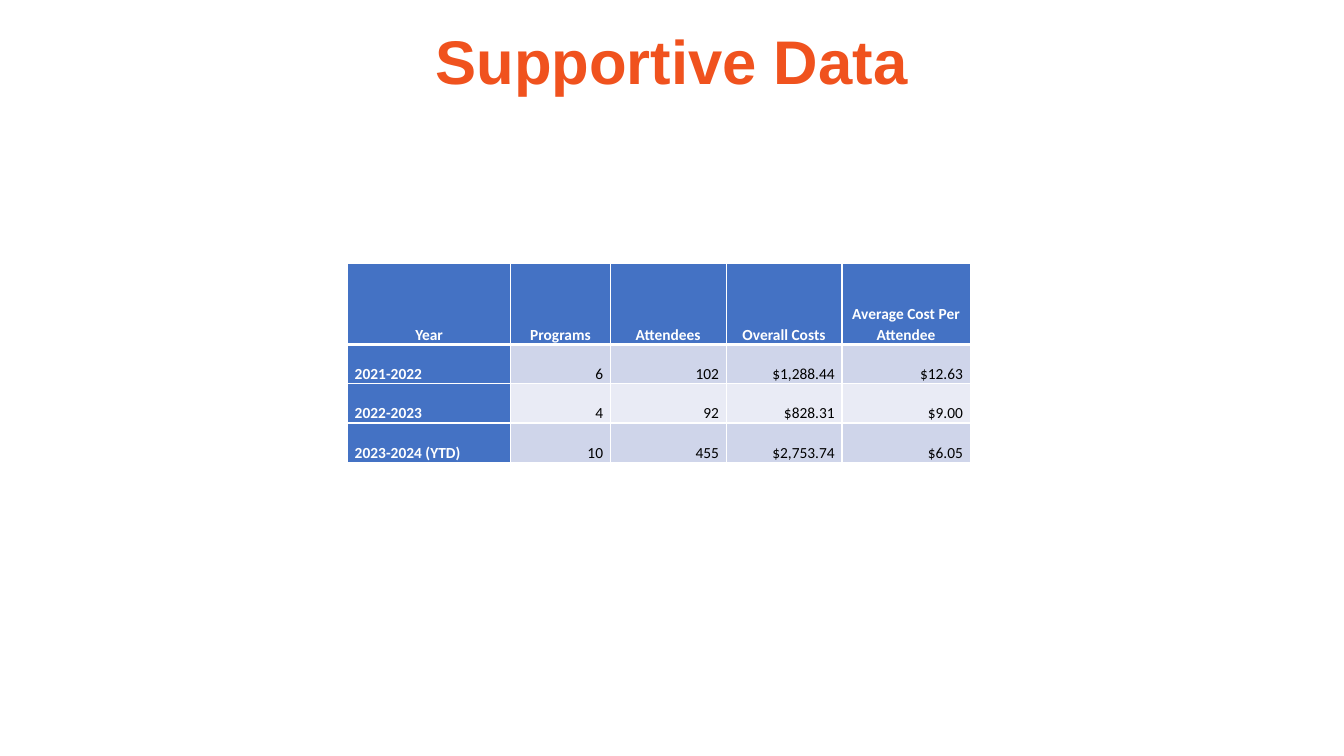
"""Build the Supportive Data slide with its program cost table."""
import lxml.etree
import pptx
import pptx.dml.color
import pptx.enum.text
import pptx.oxml.ns
import pptx.util

Cm, Pt = pptx.util.Cm, pptx.util.Pt
ALIGN, ANCHOR = pptx.enum.text.PP_ALIGN, pptx.enum.text.MSO_ANCHOR

TITLE = "Supportive Data"
ROWS = [
    ("Year", "Programs", "Attendees", "Overall Costs", "Average Cost Per Attendee"),
    ("2021-2022", "6", "102", "$1,288.44", "$12.63"),
    ("2022-2023", "4", "92", "$828.31", "$9.00"),
    ("2023-2024 (YTD)", "10", "455", "$2,753.74", "$6.05"),
]
COL_WIDTHS = [4.11, 2.51, 2.92, 2.92, 3.23]
ROW_HEIGHTS = [2.05, 0.99, 0.99, 0.99]
BLUE, BANDS = "4472C4", ("CFD5EA", "E9EBF5")
WHITE, BLACK, ORANGE = "FFFFFF", "000000", "F0521E"

TITLE_FONT = {"name": "Arial", "size": Pt(44), "bold": True}
LABEL_FONT = {"name": "Calibri", "size": Pt(11), "bold": True}
VALUE_FONT = {**LABEL_FONT, "bold": False}
CELL_FORMAT = {
    "vertical_anchor": ANCHOR.BOTTOM,
    "margin_left": Cm(0.18),
    "margin_right": Cm(0.18),
    "margin_top": 0,
    "margin_bottom": 0,
}


def rgb(value):
    return pptx.dml.color.RGBColor.from_string(value)


def apply(target, values):
    for key, value in values.items():
        setattr(target, key, value)


def write(tf, text, font, color, align, spacing):
    p = tf.paragraphs[0]
    apply(p, {"alignment": align, "line_spacing": spacing})
    r = p.add_run()
    r.text = text
    apply(r.font, font)
    r.font.color.rgb = rgb(color)


def add_borders(cell, widths):
    qn = pptx.oxml.ns.qn
    tc_pr = cell._tc.get_or_add_tcPr()
    for side, width in widths.items():
        ln = lxml.etree.SubElement(tc_pr, qn(f"a:ln{side}"), w=str(Pt(width)))
        fill = lxml.etree.SubElement(ln, qn("a:solidFill"))
        lxml.etree.SubElement(fill, qn("a:srgbClr"), val=WHITE)


def add_title(s):
    sp = s.shapes.add_textbox(Cm(2.33), Cm(0.53), Cm(29.21), Cm(3.66))
    tf = sp.text_frame
    apply(tf, {"word_wrap": True, "vertical_anchor": ANCHOR.TOP, "margin_top": Cm(0.25)})
    write(tf, TITLE, TITLE_FONT, ORANGE, ALIGN.CENTER, 0.9)


def add_data_table(s):
    table = s.shapes.add_table(
        len(ROWS), len(COL_WIDTHS), Cm(8.76), Cm(6.63),
        Cm(sum(COL_WIDTHS)), Cm(sum(ROW_HEIGHTS))).table
    table.first_col = True
    for column, width in zip(table.columns, COL_WIDTHS):
        column.width = Cm(width)
    for i, (row, height) in enumerate(zip(table.rows, ROW_HEIGHTS)):
        row.height = Cm(height)
        for j, (cell, text) in enumerate(zip(row.cells, ROWS[i])):
            is_label = i == 0 or j == 0
            apply(cell, CELL_FORMAT)
            add_borders(cell, {"L": 1, "R": 1, "T": 3 if i == 1 else 1, "B": 3 if i == 0 else 1})
            cell.fill.solid()
            cell.fill.fore_color.rgb = rgb(BLUE if is_label else BANDS[(i - 1) % 2])
            align = ALIGN.CENTER if i == 0 else ALIGN.LEFT if j == 0 else ALIGN.RIGHT
            write(cell.text_frame, text, LABEL_FONT if is_label else VALUE_FONT,
                  WHITE if is_label else BLACK, align, 1.07)


def main():
    prs = pptx.Presentation()
    apply(prs, {"slide_width": Cm(33.87), "slide_height": Cm(19.05)})
    s = prs.slides.add_slide(prs.slide_layouts[6])
    add_title(s)
    add_data_table(s)
    prs.save("out.pptx")


if __name__ == "__main__":
    main()
